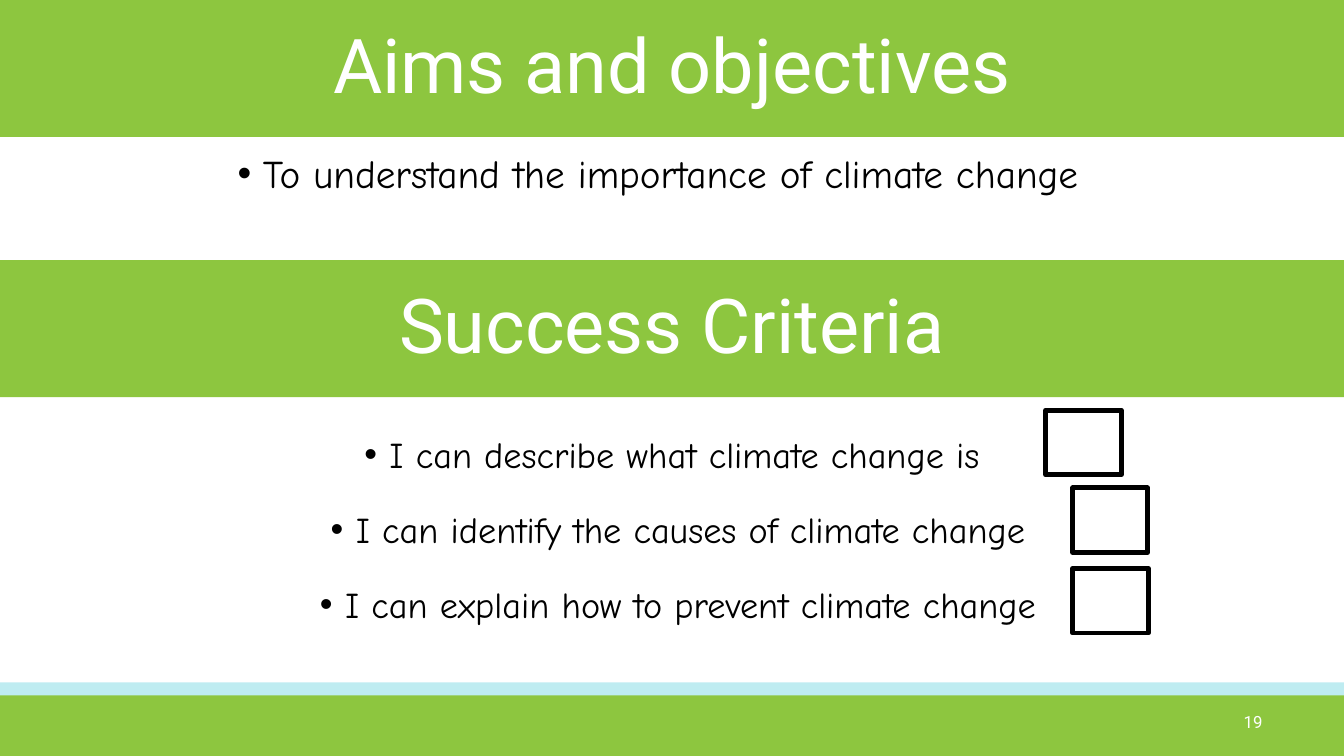
from dataclasses import dataclass

import pptx
import pptx.dml.color
import pptx.enum.shapes
import pptx.enum.text
import pptx.oxml
import pptx.oxml.ns
import pptx.util

EMU_PER_PX = 9144
ALIGN = pptx.enum.text.PP_ALIGN
ANCHOR = pptx.enum.text.MSO_ANCHOR


@dataclass(frozen=True)
class Theme:
    green: str = "8DC63F"
    aqua: str = "20BFD0"
    white: str = "FFFFFF"
    black: str = "000000"
    heading_font: str = "Roboto"
    body_font: str = "Comic Neue"
    heading_size: float = 54
    aim_size: float = 28
    criteria_size: float = 25.9
    number_size: float = 12
    checkbox_line: float = 3.5
    bullet_gap: float = 10
    bullet_indent: int = 25


THEME = Theme()


@dataclass(frozen=True)
class Area:
    left: int
    top: int
    width: int
    height: int

    def emu(self) -> list[int]:
        return [px(n) for n in (self.left, self.top, self.width, self.height)]


@dataclass(frozen=True)
class Band:
    area: Area
    color: str = THEME.green
    opacity: int = 100
    heading: str = ""


@dataclass(frozen=True)
class BulletList:
    area: Area
    lines: tuple[str, ...]
    size: float
    spacing: float


PAGE_WIDTH, PAGE_HEIGHT = 1333, 750

BANDS = (
    Band(Area(0, 677, PAGE_WIDTH, 24), THEME.aqua, 29),
    Band(Area(0, 690, PAGE_WIDTH, 60)),
    Band(Area(0, 0, PAGE_WIDTH, 136), heading="Aims and objectives"),
    Band(Area(0, 258, PAGE_WIDTH, 136), heading="Success Criteria"),
)
LISTS = (
    BulletList(
        Area(92, 148, 1134, 98),
        ("To understand the importance of climate change ",),
        THEME.aim_size,
        0.9,
    ),
    BulletList(
        Area(104, 407, 1137, 227),
        (
            "I can describe what climate change is ",
            "I can identify the causes of climate change",
            "I can explain how to prevent climate change",
        ),
        THEME.criteria_size,
        1.4,
    ),
)
CHECKBOXES = (
    Area(1037, 407, 75, 64),
    Area(1064, 484, 74, 64),
    Area(1064, 564, 75, 64),
)
NUMBER_AREA = Area(962, 696, 300, 40)


def px(length: int) -> int:
    return length * EMU_PER_PX


def rgb(color: str) -> pptx.dml.color.RGBColor:
    return pptx.dml.color.RGBColor.from_string(color)


def style(paragraph, font: str, size: float, color: str, align) -> None:
    paragraph.alignment = align
    paragraph.font.name = font
    paragraph.font.size = pptx.util.Pt(size)
    paragraph.font.color.rgb = rgb(color)


def add_rectangle(page, area: Area):
    box = page.shapes.add_shape(
        pptx.enum.shapes.MSO_SHAPE.RECTANGLE, *area.emu()
    )
    box.shadow.inherit = False
    return box


def add_band(page, band: Band) -> None:
    box = add_rectangle(page, band.area)
    box.line.fill.background()
    box.fill.solid()
    box.fill.fore_color.rgb = rgb(band.color)
    if band.opacity < 100:
        color = box.fill._xPr.find(".//" + pptx.oxml.ns.qn("a:srgbClr"))
        alpha = pptx.oxml.ns.qn("a:alpha")
        color.makeelement(alpha)
        color.append(color.makeelement(alpha, {"val": str(band.opacity * 1000)}))
    if band.heading:
        box.text_frame.vertical_anchor = ANCHOR.MIDDLE
        paragraph = box.text_frame.paragraphs[0]
        paragraph.text = band.heading
        paragraph.line_spacing = 0.9
        style(paragraph, THEME.heading_font, THEME.heading_size, THEME.white,
              ALIGN.CENTER)


def add_bullet(paragraph) -> None:
    properties = paragraph._p.get_or_add_pPr()
    properties.set("marL", str(px(THEME.bullet_indent)))
    properties.set("indent", str(-px(THEME.bullet_indent)))
    for tag, attributes in (
        ("a:buFont", {"typeface": "Arial"}),
        ("a:buChar", {"char": "•"}),
    ):
        properties.append(
            properties.makeelement(pptx.oxml.ns.qn(tag), attributes)
        )


def add_list(page, bullets: BulletList) -> None:
    frame = page.shapes.add_textbox(*bullets.area.emu()).text_frame
    frame.word_wrap = True
    for index, line in enumerate(bullets.lines):
        paragraph = frame.add_paragraph() if index else frame.paragraphs[0]
        paragraph.text = line
        add_bullet(paragraph)
        paragraph.line_spacing = bullets.spacing
        if index:
            paragraph.space_before = pptx.util.Pt(THEME.bullet_gap)
        style(paragraph, THEME.body_font, bullets.size, THEME.black,
              ALIGN.CENTER)


def add_checkbox(page, area: Area) -> None:
    box = add_rectangle(page, area)
    box.fill.background()
    box.line.color.rgb = rgb(THEME.black)
    box.line.width = pptx.util.Pt(THEME.checkbox_line)


def add_number(page, number: str) -> None:
    frame = page.shapes.add_textbox(*NUMBER_AREA.emu()).text_frame
    frame.word_wrap = True
    frame.vertical_anchor = ANCHOR.MIDDLE
    paragraph = frame.paragraphs[0]
    paragraph.text = number
    style(paragraph, THEME.heading_font, THEME.number_size, THEME.white,
          ALIGN.RIGHT)


def main() -> None:
    deck = pptx.Presentation()
    deck.slide_width = px(PAGE_WIDTH)
    deck.slide_height = px(PAGE_HEIGHT)
    page = deck.slides.add_slide(deck.slide_layouts[6])
    for band in BANDS:
        add_band(page, band)
    for bullets in LISTS:
        add_list(page, bullets)
    for area in CHECKBOXES:
        add_checkbox(page, area)
    add_number(page, "19")
    deck.save("out.pptx")


if __name__ == "__main__":
    main()
